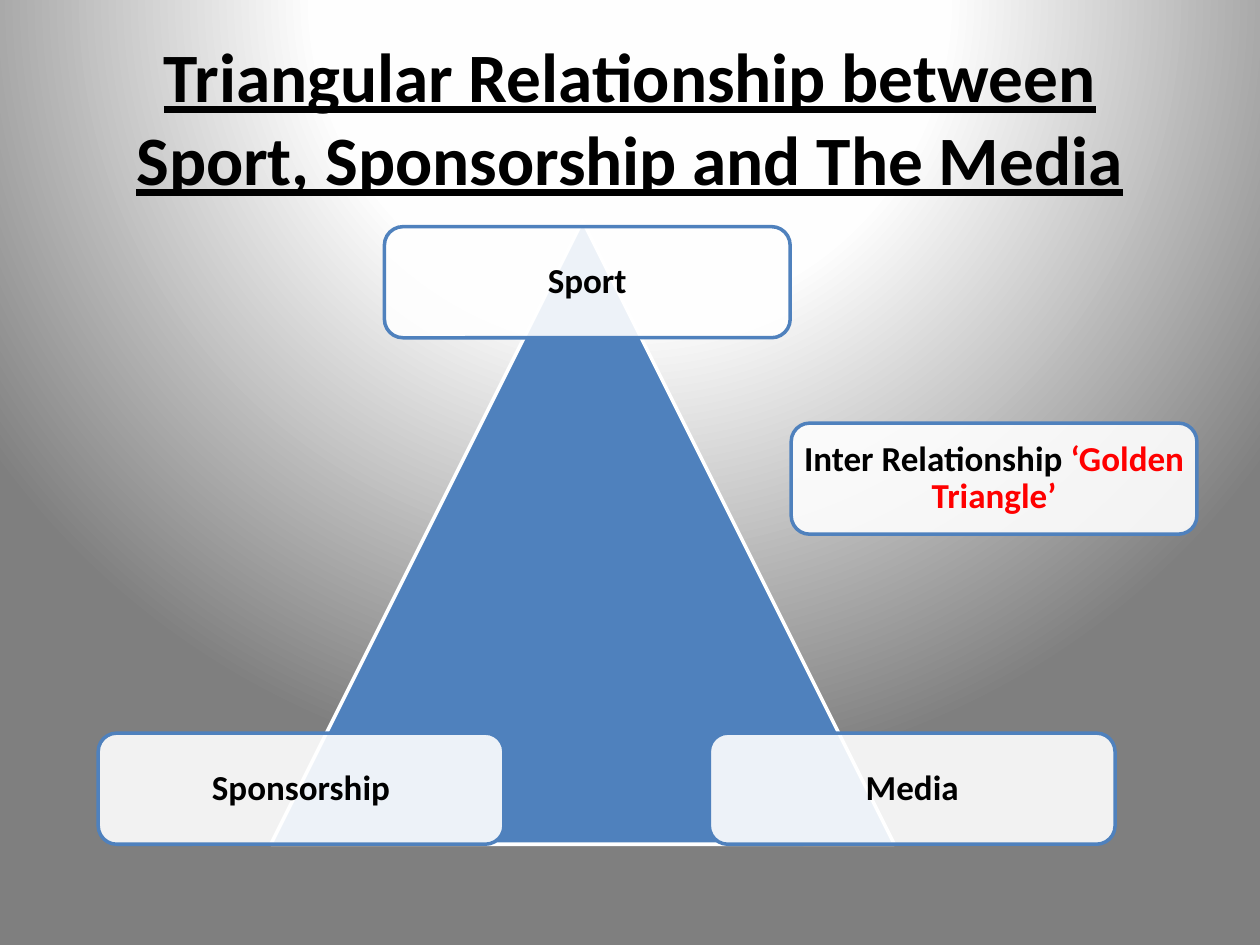
import pptx
import pptx.dml.color
import pptx.enum.shapes
import pptx.enum.text
import pptx.oxml
import pptx.oxml.ns
import pptx.util

Cm, Pt = pptx.util.Cm, pptx.util.Pt
RGB = pptx.dml.color.RGBColor.from_string
SHAPE = pptx.enum.shapes.MSO_SHAPE
ALIGN = pptx.enum.text.PP_ALIGN
ANCHOR = pptx.enum.text.MSO_ANCHOR

TITLE = "Triangular Relationship between Sport, Sponsorship and The Media"

THEME = {
    "font": "Calibri",
    "title_size": 39.6,
    "card_size": 20,
    "ink": "000000",
    "accent": "FF0000",
    "blue": "4F81BD",
    "white": "FFFFFF",
    "line_width": 2,
    "card_opacity": 90,
    "backdrop": [(0, "FFFFFF"), (40, "FEFEFE"), (100, "7F7F7F")],
}

TITLE_BOX = (1.27, 0.76, 22.86, 3.18)
TRIANGLE_LEFT, TRIANGLE_TOP, TRIANGLE_SIDE = 5.46, 4.45, 12.57
CARD_WIDTH, CARD_HEIGHT = 8.18, 2.24
BASE_TOP = TRIANGLE_TOP + TRIANGLE_SIDE - CARD_HEIGHT

CARDS = [
    (15.95, 8.53, [("Inter Relationship ", "ink"), ("‘Golden Triangle’", "accent")]),
    (7.75, 4.57, [("Sport", "ink")]),
    (1.98, BASE_TOP, [("Sponsorship", "ink")]),
    (14.3, BASE_TOP, [("Media", "ink")]),
]


def apply(target, values):
    for name, value in values.items():
        setattr(target, name, value)


def style_run(run, size, colour, **extra):
    apply(run.font, {"name": THEME["font"], "size": Pt(size), "bold": True, **extra})
    run.font.color.rgb = RGB(THEME[colour])


def paint_background(slide):
    slide.background.fill.gradient()
    gradient = slide.background._cSld.find(".//" + pptx.oxml.ns.qn("a:gradFill"))
    stops = "".join(
        f'<a:gs pos="{position * 1000}"><a:srgbClr val="{colour}"/></a:gs>'
        for position, colour in THEME["backdrop"]
    )
    radial = pptx.oxml.parse_xml(
        f'<a:gradFill {pptx.oxml.ns.nsdecls("a")} rotWithShape="1"><a:gsLst>{stops}</a:gsLst>'
        '<a:path path="circle"><a:fillToRect l="50000" t="-80000" r="50000" b="180000"/>'
        "</a:path></a:gradFill>"
    )
    gradient.getparent().replace(gradient, radial)


def add_figure(slide, preset, box, fill, line):
    figure = slide.shapes.add_shape(preset, *map(Cm, box))
    figure.shadow.inherit = False
    figure.fill.solid()
    figure.fill.fore_color.rgb = RGB(THEME[fill])
    figure.line.color.rgb = RGB(THEME[line])
    figure.line.width = Pt(THEME["line_width"])
    return figure


def add_card(slide, left, top, label):
    box = (left, top, CARD_WIDTH, CARD_HEIGHT)
    card = add_figure(slide, SHAPE.ROUNDED_RECTANGLE, box, "white", "blue")
    colour = card.fill._xPr.find(".//" + pptx.oxml.ns.qn("a:srgbClr"))
    colour.append(pptx.oxml.parse_xml(
        f'<a:alpha {pptx.oxml.ns.nsdecls("a")} val="{THEME["card_opacity"] * 1000}"/>'
    ))
    apply(card.text_frame, {
        "word_wrap": True,
        "vertical_anchor": ANCHOR.MIDDLE,
        "margin_left": Cm(0.1),
        "margin_right": Cm(0.1),
        "margin_top": Cm(0.2),
        "margin_bottom": Cm(0.2),
    })
    paragraph = card.text_frame.paragraphs[0]
    apply(paragraph, {"alignment": ALIGN.CENTER, "line_spacing": 0.9})
    for words, ink in label:
        run = paragraph.add_run()
        run.text = words
        style_run(run, THEME["card_size"], ink)


def add_title(slide):
    title = slide.shapes.title
    apply(title, dict(zip(("left", "top", "width", "height"), map(Cm, TITLE_BOX))))
    title.text_frame.text = TITLE
    apply(title.text_frame, {
        "word_wrap": True,
        "auto_size": pptx.enum.text.MSO_AUTO_SIZE.NONE,
        "vertical_anchor": ANCHOR.MIDDLE,
    })
    heading = title.text_frame.paragraphs[0]
    heading.alignment = ALIGN.CENTER
    style_run(heading.runs[0], THEME["title_size"], "ink", underline=True)


def main():
    deck = pptx.Presentation()
    apply(deck, {"slide_width": Cm(25.4), "slide_height": Cm(19.05)})
    slide = deck.slides.add_slide(deck.slide_layouts.get_by_name("Title Only"))
    paint_background(slide)
    add_title(slide)
    triangle_box = (TRIANGLE_LEFT, TRIANGLE_TOP, TRIANGLE_SIDE, TRIANGLE_SIDE)
    add_figure(slide, SHAPE.ISOSCELES_TRIANGLE, triangle_box, "blue", "white")
    for left, top, label in CARDS:
        add_card(slide, left, top, label)
    deck.save("out.pptx")


if __name__ == "__main__":
    main()
